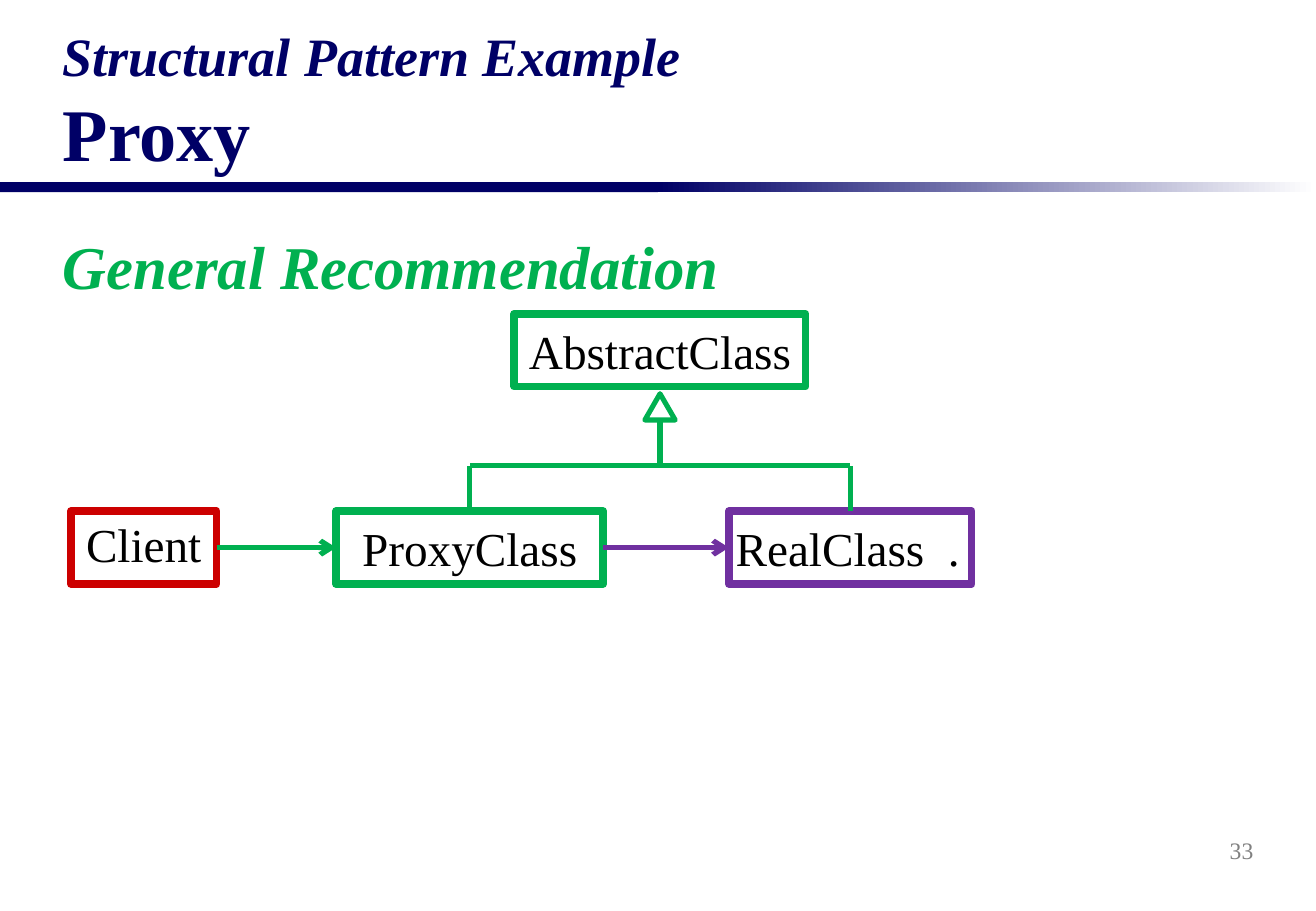
from lxml import etree
from pptx import Presentation
from pptx import util as u
from pptx.dml.color import RGBColor
from pptx.enum import shapes, text
from pptx.oxml.ns import qn

COLUMNS, ROWS = 130, 90
FONT = "Times New Roman"
COLORS = {"navy": "000066", "white": "FFFFFF", "green": "00B050", "purple": "7030A0",
          "red": "CC0000", "black": "000000", "gray": "808080"}

deck = Presentation()
deck.slide_width, deck.slide_height = u.Inches(10.83), u.Inches(7.5)


def rgb(name):
    return RGBColor.from_string(COLORS[name])


def x(columns):
    return round(deck.slide_width * columns / COLUMNS)


def y(rows):
    return round(deck.slide_height * rows / ROWS)


def place(box):
    left, top, width, height = box
    return x(left), y(top), x(width), y(height)


def write(para, words, size, color="black", bold=False, italic=False, align="LEFT"):
    para.alignment = getattr(text.PP_ALIGN, align)
    span = para.add_run()
    span.text = words
    font = span.font
    font.name, font.size, font.bold, font.italic = FONT, u.Pt(size), bold, italic
    font.color.rgb = rgb(color)


def frame_of(shape, anchor, wrap=True):
    frame = shape.text_frame
    frame.word_wrap = wrap
    frame.auto_size = text.MSO_AUTO_SIZE.NONE
    frame.vertical_anchor = getattr(text.MSO_ANCHOR, anchor)
    return frame


def add_shape(page, kind, box, line=None, width=4.5):
    shape = page.shapes.add_shape(kind, *place(box))
    shape.shadow.inherit = False
    shape.fill.background()
    if line:
        shape.line.color.rgb = rgb(line)
        shape.line.width = u.Pt(width)
    else:
        shape.line.fill.background()
    return shape


def add_class(page, box, name, color, align="CENTER"):
    shape = add_shape(page, shapes.MSO_SHAPE.RECTANGLE, box, color)
    write(frame_of(shape, "MIDDLE", wrap=False).paragraphs[0], name, 28, align=align)
    return shape


def add_line(page, start, end, color="green", arrow=False):
    line = page.shapes.add_connector(shapes.MSO_CONNECTOR.STRAIGHT,
                                     x(start[0]), y(start[1]), x(end[0]), y(end[1]))
    line.line.color.rgb = rgb(color)
    line.line.width = u.Pt(3)
    properties = line._element.spPr
    if arrow:
        etree.SubElement(properties.find(qn("a:ln")), qn("a:tailEnd"), type="arrow")
    etree.SubElement(properties, qn("a:effectLst"))
    return line


def add_rule(page, box):
    left, top, width, height = box
    half = width / 2
    solid, fade = [add_shape(page, shapes.MSO_SHAPE.RECTANGLE, (left + i * half, top, half, height))
                   for i in range(2)]
    solid.fill.solid()
    solid.fill.fore_color.rgb = rgb("navy")
    fade.fill.gradient()
    fade.fill.gradient_angle = 0
    for stop, position, color in zip(fade.fill.gradient_stops, (0, 1), ("navy", "white")):
        stop.position = position
        stop.color.rgb = rgb(color)


def add_title(page, box):
    title = page.shapes.title
    title.left, title.top, title.width, title.height = place(box)
    para = frame_of(title, "BOTTOM").paragraphs[0]
    write(para, "Structural Pattern Example", 32, "navy", bold=True, italic=True)
    para.add_line_break()
    write(para, "Proxy", 44, "navy", bold=True)


def add_heading(page, box):
    heading = page.shapes.add_textbox(*place(box))
    para = frame_of(heading, "TOP").paragraphs[0]
    para.space_before = u.Pt(7)
    write(para, "General Recommendation", 36, "green", bold=True, italic=True)


def add_page_number(page, box):
    number = page.shapes.add_textbox(*place(box))
    write(frame_of(number, "MIDDLE").paragraphs[0], "33", 14, "gray", align="RIGHT")


def add_class_diagram(page, box):
    left, top, width, height = box
    tall = 7.2
    low = top + height - tall
    bus = top + 15
    tip = top + 7.9
    base = tip + 2.6
    stem = left + 58.2
    client = add_class(page, (left, low, 14.4, tall), "Client", "red")
    client.text_frame.paragraphs[0].line_spacing = 0.9
    proxy = add_class(page, (left + 26.2, low, 26.4, tall), "ProxyClass", "green")
    real = add_class(page, (left + width - 24, low, 24, tall), "RealClass  .", "purple", "RIGHT")
    add_class(page, (stem - 14.4, top, 28.8, tall), "AbstractClass", "green")

    middle = low + tall / 2
    for source, target, color in ((client, proxy, "green"), (proxy, real, "purple")):
        arrow = add_line(page, (left, middle), (left + width, middle), color, arrow=True)
        arrow.begin_connect(source, 3)
        arrow.end_connect(target, 1)

    branches = (left + 39.4, left + width - 12)
    for child, branch in zip((proxy, real), branches):
        add_line(page, (branch, low), (branch, bus)).begin_connect(child, 0)
    add_line(page, (branches[1], bus), (branches[0], bus))
    add_line(page, (stem, bus), (stem, base))
    add_shape(page, shapes.MSO_SHAPE.ISOSCELES_TRIANGLE,
              (stem - 1.5, tip, 3, base - tip), "green", 3)


def build_slide():
    page = deck.slides.add_slide(deck.slide_layouts[5])
    add_rule(page, (0, 18, COLUMNS, 1))
    add_page_number(page, (98, 81, 27, 6))
    add_title(page, (5, 4, 120, 14))
    add_heading(page, (5, 22, 120, 9))
    add_class_diagram(page, (7, 31, 89, 26.7))


if __name__ == "__main__":
    build_slide()
    deck.save("out.pptx")
